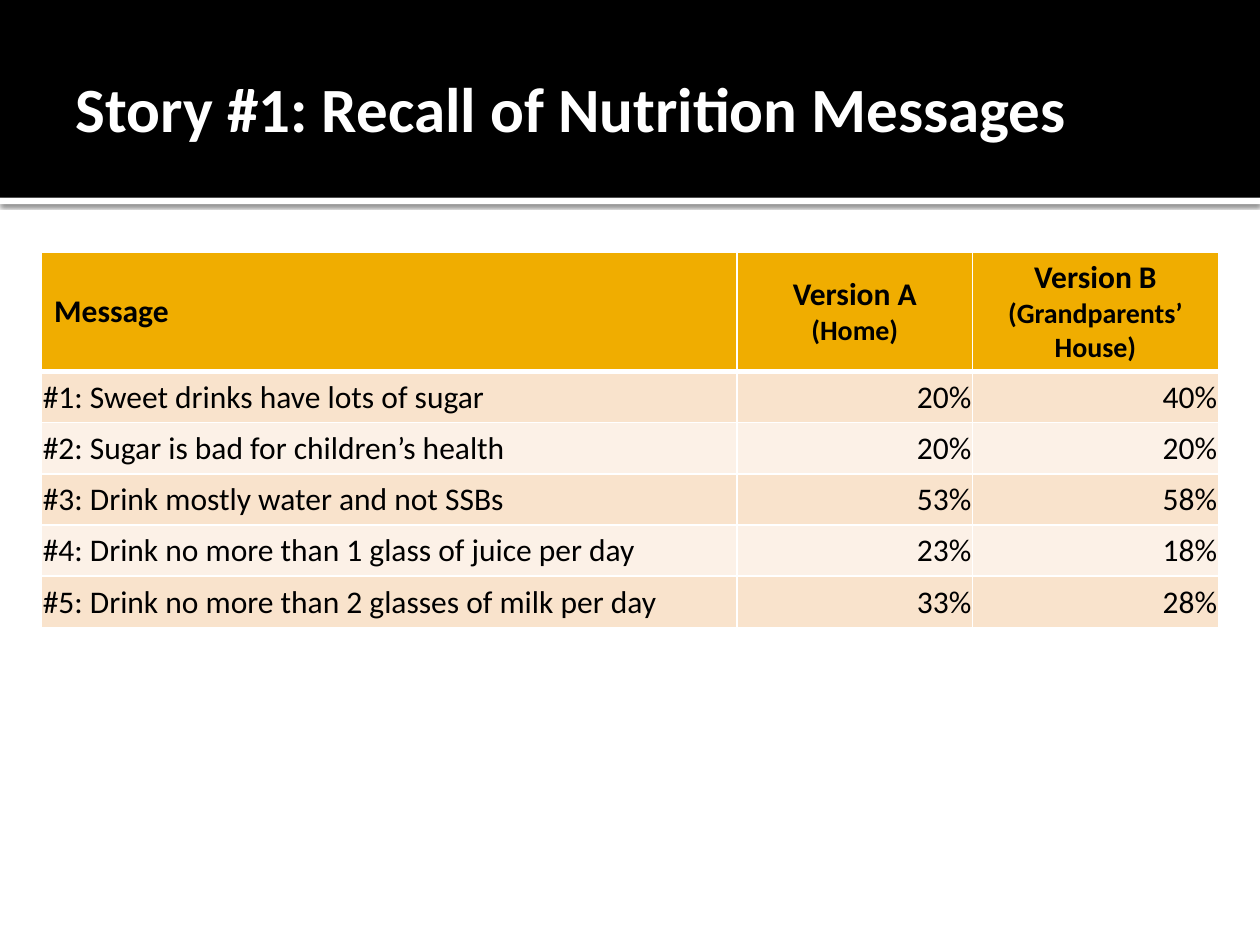
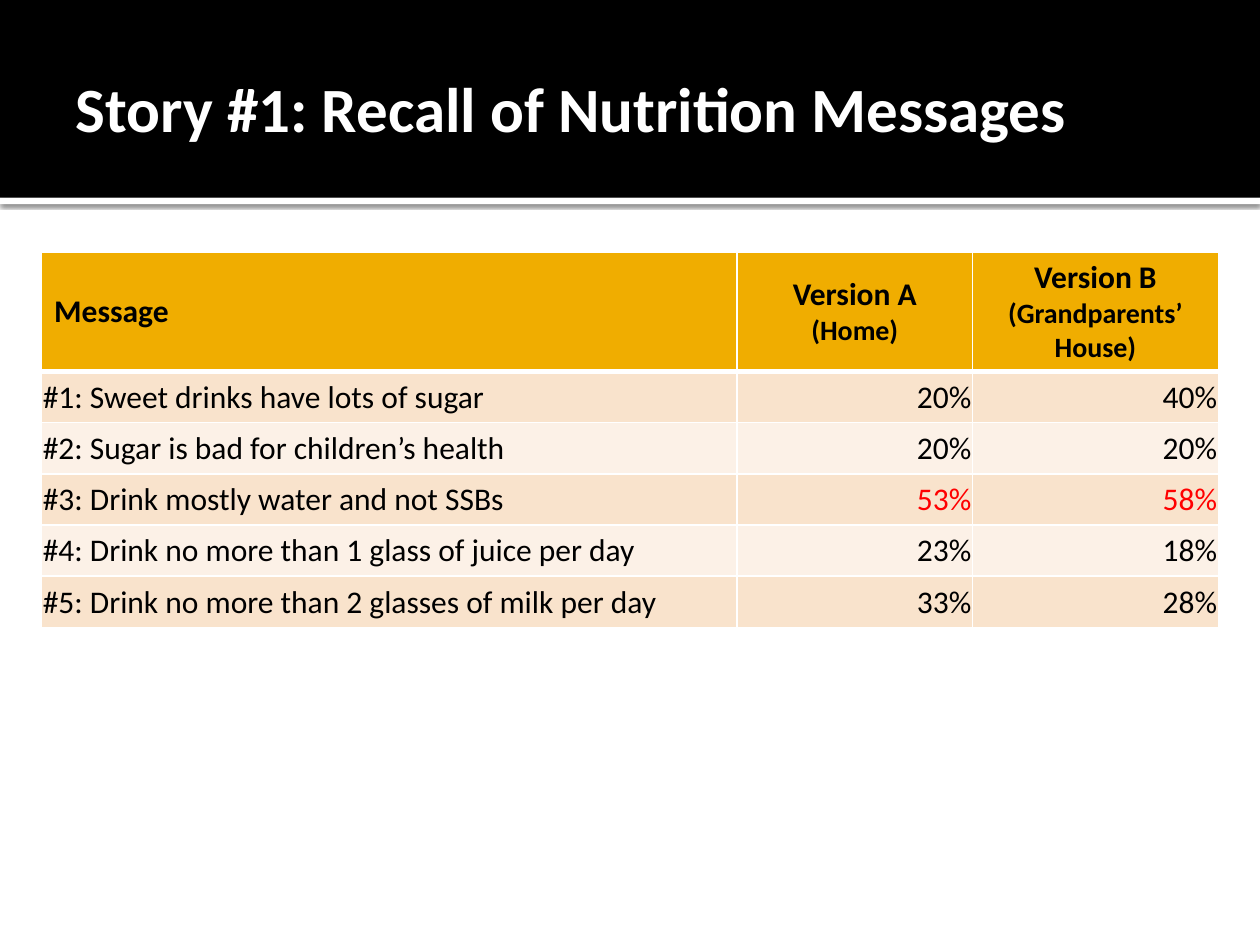
from lxml import etree
from pptx import Presentation
from pptx import util as u
from pptx.dml.color import RGBColor
from pptx.enum import shapes, text
from pptx.oxml import ns

# Content
TITLE = "Story #1: Recall of Nutrition Messages"
HEADER = [["Message"], ["Version A", "(Home)"], ["Version B", "(Grandparents’ House)"]]
MESSAGES = [
    ("#1: Sweet drinks have lots of sugar", "20%", "40%"),
    ("#2: Sugar is bad for children’s health", "20%", "20%"),
    ("#3: Drink mostly water and not SSBs", "53%", "58%"),
    ("#4: Drink no more than 1 glass of juice per day", "23%", "18%"),
    ("#5: Drink no more than 2 glasses of milk per day", "33%", "28%"),
]
HIGHLIGHTED_ROWS = [None, 3]  # one entry per slide

# Style
FONT = "Calibri"
COLORS = {"black": "000000", "white": "FFFFFF", "gold": "F0AD00",
          "band1": "F9E3CC", "band2": "FCF1E7", "red": "FF0000"}
ALIGN = text.PP_ALIGN
COLUMNS = [5.52, 1.87, 1.95]
HEADER_H, TABLE_H = 0.93, 2.96
BAND_H = 1.57


def rgb(name):
    return RGBColor.from_string(COLORS[name])


def add_run(p, words, size, color, bold):
    r = p.add_run()
    r.text = words
    r.font.name, r.font.size, r.font.bold = FONT, u.Pt(size), bold
    r.font.color.rgb = rgb(color)


def set_insets(box, left, top, right, bottom):
    box.margin_left, box.margin_top = u.Inches(left), u.Inches(top)
    box.margin_right, box.margin_bottom = u.Inches(right), u.Inches(bottom)


def add_band(slide, top, height, color):
    sp = slide.shapes.add_shape(shapes.MSO_SHAPE.RECTANGLE, 0, u.Inches(top),
                                u.Inches(10), u.Inches(height))
    sp.shadow.inherit = False
    sp.fill.solid()
    sp.fill.fore_color.rgb = rgb(color)
    sp.line.fill.background()
    return sp


def add_shadow(sp):
    effects = sp.element.spPr.find(ns.qn("a:effectLst"))
    shadow = etree.SubElement(effects, ns.qn("a:outerShdw"), blurRad=str(u.Pt(2.5)),
                              dist=str(u.Pt(0.8)), dir="5400000", rotWithShape="0")
    color = etree.SubElement(shadow, ns.qn("a:srgbClr"), val=COLORS["black"])
    etree.SubElement(color, ns.qn("a:alpha"), val="60000")


def style_layout(layout, slide):
    """Move the shared bands behind the layout's title and place that title."""
    strip = add_band(slide, BAND_H, 0.05, "white")
    add_shadow(strip)
    band = add_band(slide, 0, BAND_H, "black")
    for i, sp in enumerate((strip, band)):
        layout.shapes.element.insert(2 + i, sp.element)
    title = layout.placeholders[0]
    title.left, title.top = u.Inches(0.5), u.Inches(0.17)
    title.width, title.height = u.Inches(9.25), u.Inches(1.37)


def add_title(slide):
    tf = slide.shapes.title.text_frame
    tf.vertical_anchor = text.MSO_ANCHOR.MIDDLE
    set_insets(tf, 0.1, 0.05, 0.05, 0.05)
    p = tf.paragraphs[0]
    p.alignment = ALIGN.LEFT
    add_run(p, TITLE, 36, "white", True)


def set_borders(cell, top, bottom):
    tcPr = cell._tc.get_or_add_tcPr()
    for i, (side, width) in enumerate((("L", 1), ("R", 1), ("T", top), ("B", bottom))):
        ln = etree.Element(ns.qn(f"a:ln{side}"), w=str(u.Pt(width)))
        fill = etree.SubElement(ln, ns.qn("a:solidFill"))
        etree.SubElement(fill, ns.qn("a:srgbClr"), val=COLORS["white"])
        tcPr.insert(i, ln)


def fill_cell(cell, lines, sizes, align, fill, color="black", bold=False):
    cell.fill.solid()
    cell.fill.fore_color.rgb = rgb(fill)
    cell.vertical_anchor = text.MSO_ANCHOR.MIDDLE
    tf = cell.text_frame
    for i, (words, size) in enumerate(zip(lines, sizes)):
        p = tf.add_paragraph() if i else tf.paragraphs[0]
        p.alignment = align
        add_run(p, words, size, color, bold)


def add_message_table(slide, highlighted):
    table = slide.shapes.add_table(
        len(MESSAGES) + 1, len(COLUMNS), u.Inches(0.33), u.Inches(2),
        u.Inches(sum(COLUMNS)), u.Inches(TABLE_H)).table
    for column, width in zip(table.columns, COLUMNS):
        column.width = u.Inches(width)
    for i, row in enumerate(table.rows):
        row.height = u.Inches((TABLE_H - HEADER_H) / len(MESSAGES) if i else HEADER_H)

    # Header row
    for c, lines in enumerate(HEADER):
        cell = table.cell(0, c)
        fill_cell(cell, lines, (18, 16), ALIGN.CENTER if c else ALIGN.LEFT, "gold", bold=True)
        set_borders(cell, 1, 3)

    # Message rows
    for r, message in enumerate(MESSAGES, 1):
        for c, words in enumerate(message):
            cell = table.cell(r, c)
            fill_cell(cell, [words], [18], ALIGN.RIGHT if c else ALIGN.LEFT,
                      "band1" if r % 2 else "band2",
                      "red" if c and r == highlighted else "black")
            set_insets(cell, 0.01, 0.01, 0.01, 0)
            set_borders(cell, 3 if r == 1 else 1, 1)


def main():
    prs = Presentation()
    prs.slide_width, prs.slide_height = u.Inches(10), u.Inches(7.5)
    layout = prs.slide_layouts[5]
    for i, highlighted in enumerate(HIGHLIGHTED_ROWS):
        slide = prs.slides.add_slide(layout)
        if i == 0:
            style_layout(layout, slide)
        add_title(slide)
        add_message_table(slide, highlighted)
    prs.save("out.pptx")


if __name__ == "__main__":
    main()
